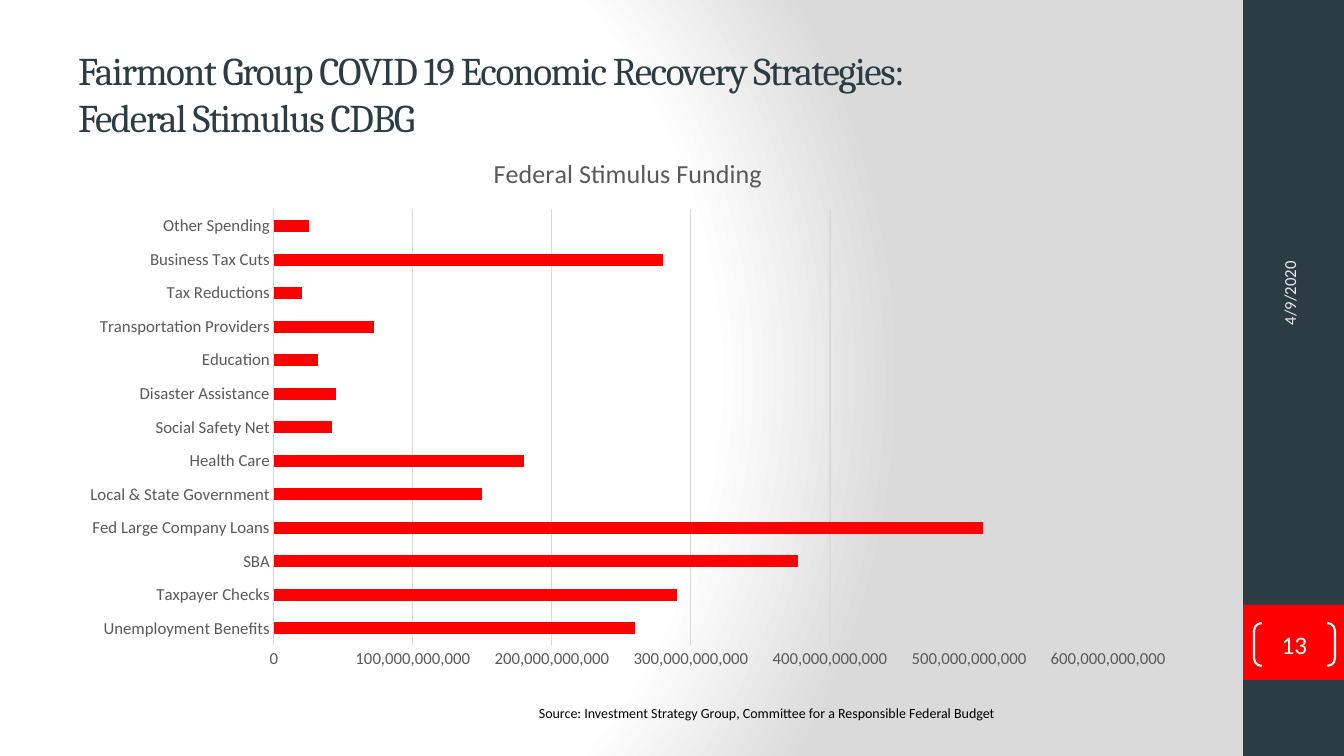
from dataclasses import dataclass

from pptx import Presentation
from pptx.chart.data import CategoryChartData
from pptx.dml.color import RGBColor
from pptx.enum.chart import XL_CHART_TYPE, XL_TICK_MARK
from pptx.enum.shapes import MSO_SHAPE
from pptx.enum.text import MSO_ANCHOR, MSO_AUTO_SIZE, PP_ALIGN
from pptx.oxml import parse_xml
from pptx.oxml.ns import nsdecls
from pptx.util import Emu, Pt

BAR = XL_CHART_TYPE.BAR_CLUSTERED
NO_TICK = XL_TICK_MARK.NONE
RECT, BRACKETS = MSO_SHAPE.RECTANGLE, MSO_SHAPE.DOUBLE_BRACKET
MIDDLE = MSO_ANCHOR.MIDDLE
LEFT, CENTER = PP_ALIGN.LEFT, PP_ALIGN.CENTER

TITLE = "Fairmont Group COVID 19 Economic Recovery Strategies: \vFederal Stimulus CDBG"
CHART_TITLE = "Federal Stimulus Funding"
SOURCE = "Source: Investment Strategy Group, Committee for a Responsible Federal Budget"
DATE, PAGE = "4/9/2020", "13"
FUNDING_BILLIONS = {
    "Unemployment Benefits": 260,
    "Taxpayer Checks": 290,
    "SBA": 377,
    "Fed Large Company Loans": 510,
    "Local & State Government": 150,
    "Health Care": 180,
    "Social Safety Net": 42,
    "Disaster Assistance": 45,
    "Education": 32,
    "Transportation Providers": 72,
    "Tax Reductions": 20,
    "Business Tax Cuts": 280,
    "Other Spending": 25,
}
BILLION = 10**9


@dataclass(frozen=True)
class Theme:
    dark: str = "2C3C43"
    accent: str = "FF0000"
    white: str = "FFFFFF"
    shade: str = "DADADA"
    pale: str = "EBEBEB"
    black: str = "000000"
    label: str = "595959"
    grid: str = "D9D9D9"
    heading: str = "Cambria"
    body: str = "Calibri"
    title_pt: int = 28
    chart_title_pt: float = 18.6
    page_pt: int = 18
    label_pt: int = 12
    source_pt: int = 10


T = Theme()
W, H = 1344, 756
BAND_X = 1243
CONTENT_X, CONTENT_W = 68, 1120


def px(*lengths):
    return [Emu(round(n * 914400 / 100.8)) for n in lengths]


def rgb(code):
    return RGBColor.from_string(code)


def set_font(font, size, color, name=T.body):
    for key, value in {"size": Pt(size), "name": name, "bold": False}.items():
        setattr(font, key, value)
    font.color.rgb = rgb(color)


def set_line(line, color, width=0.75):
    line.color.rgb = rgb(color)
    line.width = Pt(width)


def write(sp, text, size, color, name=T.body, align=LEFT, **frame):
    tf = sp.text_frame
    for key, value in {"word_wrap": True, **frame}.items():
        setattr(tf, key, value)
    p = tf.paragraphs[0]
    p.text = text
    p.alignment = align
    for r in p.runs:
        set_font(r.font, size, color, name)
    return p


def add_shape(s, kind, box, fill=None):
    sp = s.shapes.add_shape(kind, *px(*box))
    sp.shadow.inherit = False
    if fill:
        sp.fill.solid()
        sp.fill.fore_color.rgb = rgb(fill)
        sp.line.fill.background()
    else:
        sp.fill.background()
    return sp


def set_background(s):
    """Radial gradient, white on the left and grey on the right."""
    stops = "".join(
        f'<a:gs pos="{pos * 1000}"><a:srgbClr val="{color}"/></a:gs>'
        for pos, color in ((0, T.white), (75, T.white), (100, T.shade)))
    bg = parse_xml(
        f'<p:bg {nsdecls("p", "a")}><p:bgPr><a:gradFill rotWithShape="1">'
        f'<a:gsLst>{stops}</a:gsLst><a:path path="circle">'
        '<a:fillToRect l="20000" t="50000" r="100000" b="50000"/></a:path>'
        '</a:gradFill><a:effectLst/></p:bgPr></p:bg>')
    s.element.cSld.insert(0, bg)


def add_title(s):
    sp = s.shapes.title
    sp.left, sp.top, sp.width, sp.height = px(CONTENT_X, 30, CONTENT_W, 126)
    p = write(sp, TITLE, T.title_pt, T.dark, T.heading,
              vertical_anchor=MIDDLE, auto_size=MSO_AUTO_SIZE.NONE)
    for r in p.runs:
        r.font._element.set("spc", "-100")


def add_side_band(s):
    width = W - BAND_X
    add_shape(s, RECT, (BAND_X, 0, width, H), T.dark)
    add_shape(s, RECT, (BAND_X, 605, width, 75), T.accent)
    date = s.shapes.add_textbox(*px(1155, 174, 269, 53))
    date.rotation = 270
    write(date, DATE, T.label_pt, T.pale, vertical_anchor=MIDDLE)
    page = add_shape(s, BRACKETS, (1254, 623, 81, 43))
    page.adjustments[0] = 0.18
    set_line(page.line, T.white, 1.5)
    margins = dict.fromkeys(
        ("margin_left", "margin_top", "margin_right", "margin_bottom"), 0)
    write(page, PAGE, T.page_pt, T.white, align=CENTER,
          vertical_anchor=MIDDLE, **margins)


def add_funding_chart(s):
    data = CategoryChartData(number_format="#,##0")
    data.categories = list(FUNDING_BILLIONS)
    data.add_series("Series 1", [n * BILLION for n in FUNDING_BILLIONS.values()])
    box = px(CONTENT_X, 134, CONTENT_W, 546)
    chart = s.shapes.add_chart(BAR, *box, data).chart
    set_font(chart.font, T.label_pt, T.label)
    chart.has_legend = False
    chart.has_title = True
    chart.chart_title.include_in_layout = False
    p = chart.chart_title.text_frame.paragraphs[0]
    p.text = CHART_TITLE
    set_font(p.runs[0].font, T.chart_title_pt, T.label)

    plot = chart.plots[0]
    plot.gap_width = 182
    plot.vary_by_categories = False
    fill = plot.series[0].format.fill
    fill.solid()
    fill.fore_color.rgb = rgb(T.accent)

    for axis in (chart.category_axis, chart.value_axis):
        axis.major_tick_mark = axis.minor_tick_mark = NO_TICK
        set_font(axis.tick_labels.font, T.label_pt, T.label)
    set_line(chart.category_axis.format.line, T.grid)
    values = chart.value_axis
    values.format.line.fill.background()
    values.minimum_scale, values.maximum_scale = 0, 600 * BILLION
    values.major_unit = 100 * BILLION
    values.tick_labels.number_format = "#,##0"
    values.tick_labels.number_format_is_linked = False
    set_line(values.major_gridlines.format.line, T.grid)


def main():
    prs = Presentation()
    prs.slide_width, prs.slide_height = px(W, H)
    s = prs.slides.add_slide(prs.slide_layouts[5])
    set_background(s)
    add_side_band(s)
    add_funding_chart(s)
    source = s.shapes.add_textbox(*px(529, 700, 663, 27))
    write(source, SOURCE, T.source_pt, T.black)
    add_title(s)
    prs.save("out.pptx")


if __name__ == "__main__":
    main()
